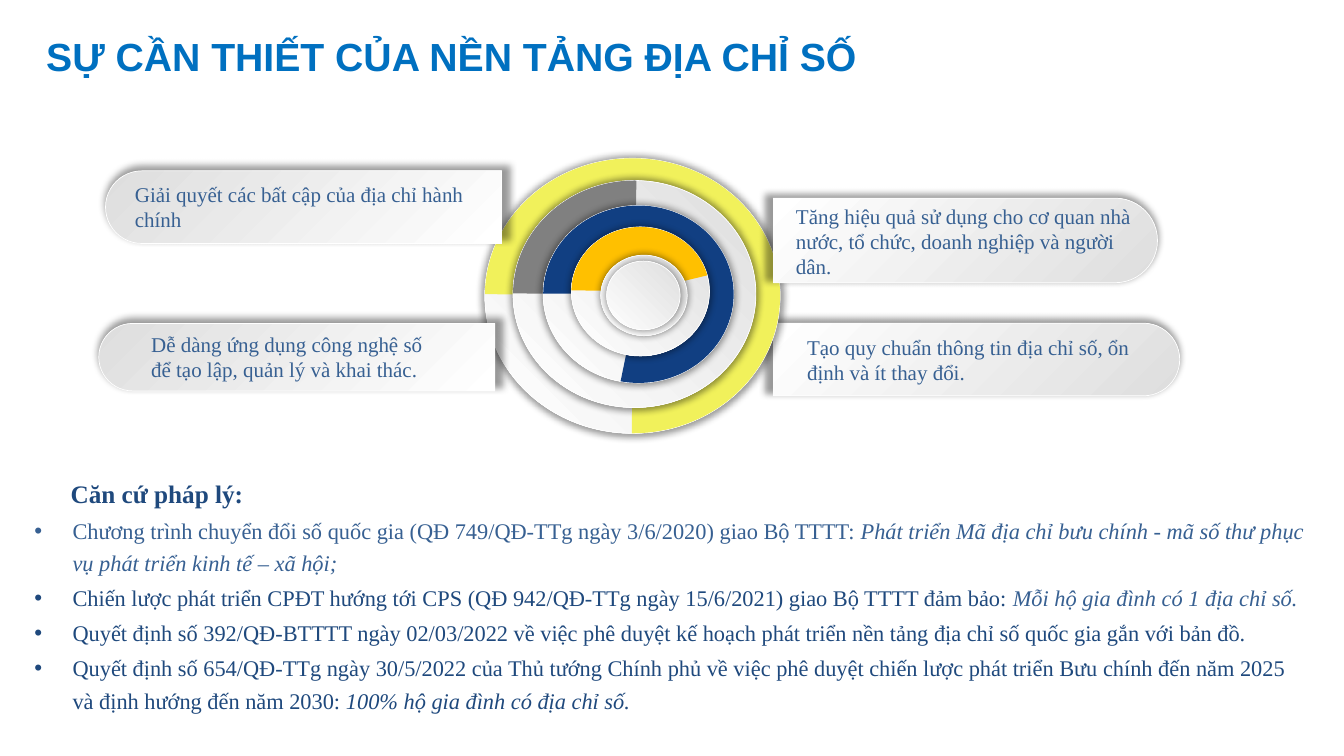
from dataclasses import dataclass

from lxml.etree import SubElement
from pptx import Presentation
from pptx.dml.color import RGBColor
from pptx.enum.shapes import MSO_SHAPE as Preset
from pptx.enum.text import MSO_ANCHOR as Anchor, MSO_AUTO_SIZE as AutoSize, PP_ALIGN as Align
from pptx.oxml.ns import qn
from pptx.util import Cm, Pt

SERIF = "Times New Roman"
STEEL = "376092"
NAVY = "1F497D"


@dataclass(frozen=True)
class Area:
    left: float
    top: float
    width: float
    height: float

    def lengths(self) -> tuple:
        return Cm(self.left), Cm(self.top), Cm(self.width), Cm(self.height)


@dataclass(frozen=True)
class Tab:
    center_x: float
    center_y: float
    thickness: float
    length: float
    rotation: int


@dataclass(frozen=True)
class Ring:
    area: Area
    start: float = 0
    end: float = 0
    color: str = ""


@dataclass(frozen=True)
class Label:
    area: Area
    text: str


@dataclass(frozen=True)
class Piece:
    text: str
    color: str = NAVY
    italic: bool = False


TABS = [
    Tab(24.61, 9.06, 1.83, 10.24, 90),
    Tab(7.65, 5.22, 1.83, 9.98, 270),
    Tab(7.48, 9, 1.7, 9.98, 270),
    Tab(24.33, 6.06, 2.13, 9.68, 90),
]
RINGS = [
    Ring(Area(12.22, 3.99, 7.44, 6.93), 180.65, 90.22, "F1F15B"),
    Ring(Area(12.93, 4.55, 6.12, 5.72), 180.27, 270.98, "808080"),
    Ring(Area(13.69, 5.18, 4.8, 4.47), 180.42, 101.58, "113F82"),
    Ring(Area(14.4, 5.72, 3.48, 3.25), 180.98, 346.45, "FFC000"),
]
HUB = [
    Ring(Area(15.14, 6.43, 2.18, 2.03)),
    Ring(Area(15.29, 6.58, 1.85, 1.73)),
]
LABELS = [
    Label(Area(3.15, 4.45, 9.25, 1.55), "Giải quyết các bất cập của địa chỉ hành chính"),
    Label(Area(19.81, 5, 9.35, 2.18),
          "Tăng hiệu quả sử dụng cho cơ quan nhà nước, tổ chức, doanh nghiệp và người dân."),
    Label(Area(3.56, 8.23, 7.85, 1.55),
          "Dễ dàng ứng dụng công nghệ số để tạo lập, quản lý và khai thác."),
    Label(Area(20.09, 8.31, 9.07, 1.55),
          "Tạo quy chuẩn thông tin địa chỉ số, ổn định và ít thay đổi."),
]
LEGAL_BASES = [
    [
        Piece("Chương trình chuyển đổi số quốc gia (QĐ 749/QĐ-TTg ngày 3/6/2020) giao Bộ TTTT: ", STEEL),
        Piece("Phát triển Mã địa chỉ bưu chính - mã số thư phục vụ phát triển kinh tế – xã hội;",
              STEEL, True),
    ],
    [
        Piece("Chiến lược phát triển CPĐT hướng tới CPS (QĐ 942/QĐ-TTg ngày 15/6/2021) "
              "giao Bộ TTTT đảm bảo: "),
        Piece("Mỗi hộ gia đình có 1 địa chỉ số.", STEEL, True),
    ],
    [
        Piece("Quyết định số 392/QĐ-BTTTT ngày 02/03/2022 về việc phê duyệt kế hoạch "
              "phát triển nền tảng địa chỉ số quốc gia gắn với bản đồ."),
    ],
    [
        Piece("Quyết định số 654/QĐ-TTg ngày 30/5/2022 của Thủ tướng Chính phủ về việc phê duyệt "
              "chiến lược phát triển Bưu chính đến năm 2025 và định hướng đến năm 2030: "),
        Piece("100% hộ gia đình có địa chỉ số.", italic=True),
    ],
]


def rgb(color: str) -> RGBColor:
    return RGBColor.from_string(color)


def style_font(font, name: str, size: float, color: str, bold=False, italic=False) -> None:
    font.name, font.size, font.bold, font.italic = name, Pt(size), bold, italic
    font.color.rgb = rgb(color)


def add_glow(shape) -> None:
    shape.shadow.inherit = False
    effects = shape._element.spPr.find(qn("a:effectLst"))
    shadow = SubElement(effects, qn("a:outerShdw"), blurRad=str(Pt(5)), sx="102000",
                        sy="102000", algn="ctr", rotWithShape="0")
    black = SubElement(shadow, qn("a:srgbClr"), val="000000")
    SubElement(black, qn("a:alpha"), val="40000")


def add_silver(page, preset, area: Area):
    shape = page.shapes.add_shape(preset, *area.lengths())
    shape.fill.gradient()
    shape.fill.gradient_angle = 225
    for stop, color in zip(shape.fill.gradient_stops, ("DEDEDE", "FFFFFF")):
        stop.color.rgb = rgb(color)
    shape.line.color.rgb = rgb("FFFFFF")
    shape.line.width = Pt(0.5)
    add_glow(shape)
    return shape


def add_tab(page, tab: Tab) -> None:
    area = Area(tab.center_x - tab.thickness / 2, tab.center_y - tab.length / 2,
                tab.thickness, tab.length)
    shape = add_silver(page, Preset.ROUND_2_SAME_RECTANGLE, area)
    shape.adjustments[0], shape.adjustments[1] = 0.5, 0
    shape.rotation = tab.rotation


def add_ring(page, ring: Ring) -> None:
    add_silver(page, Preset.OVAL, ring.area)
    if ring.color:
        sector = page.shapes.add_shape(Preset.PIE, *ring.area.lengths())
        sector.adjustments[0], sector.adjustments[1] = ring.start * 0.6, ring.end * 0.6
        sector.fill.solid()
        sector.fill.fore_color.rgb = rgb(ring.color)
        sector.line.fill.background()
        sector.shadow.inherit = False


def add_box(page, area: Area):
    frame = page.shapes.add_textbox(*area.lengths()).text_frame
    frame.word_wrap = True
    frame.auto_size = AutoSize.SHAPE_TO_FIT_TEXT
    return frame


def add_label(page, label: Label) -> None:
    frame = add_box(page, label.area)
    frame.text = label.text
    style_font(frame.paragraphs[0].runs[0].font, SERIF, 15, STEEL)


def set_title(page) -> None:
    title = page.shapes.title
    title.left, title.top, title.width, title.height = Area(0.91, 0.2, 30.48, 2.41).lengths()
    frame = title.text_frame
    frame.text = "SỰ CẦN THIẾT CỦA NỀN TẢNG ĐỊA CHỈ SỐ"
    frame.vertical_anchor = Anchor.MIDDLE
    frame.auto_size = AutoSize.NONE
    frame.paragraphs[0].alignment = Align.LEFT
    style_font(frame.paragraphs[0].runs[0].font, "Arial", 28, "0070C0", bold=True)


def add_legal_bases(page) -> None:
    frame = add_box(page, Area(0.69, 11.81, 32.49, 6.22))
    frame.margin_left = frame.margin_right = Cm(0.18)
    frame.margin_top = frame.margin_bottom = Cm(0.1)
    heading = frame.paragraphs[0]
    heading.text = "Căn cứ pháp lý:"
    heading.line_spacing = 1.2
    heading._p.get_or_add_pPr().set("marL", str(Cm(0.91)))
    style_font(heading.runs[0].font, SERIF, 18, NAVY, bold=True)
    for pieces in LEGAL_BASES:
        para = frame.add_paragraph()
        para.line_spacing = 1.2
        para.space_before = Pt(2)
        properties = para._p.get_or_add_pPr()
        properties.set("marL", str(Cm(0.96)))
        properties.set("indent", str(-Cm(0.96)))
        SubElement(properties, qn("a:buFont"), typeface="Arial")
        SubElement(properties, qn("a:buChar"), char="•")
        for piece in pieces:
            span = para.add_run()
            span.text = piece.text
            style_font(span.font, SERIF, 16, piece.color, italic=piece.italic)


def main() -> None:
    deck = Presentation()
    deck.slide_width, deck.slide_height = Cm(33.87), Cm(19.05)
    page = deck.slides.add_slide(deck.slide_layouts[5])
    set_title(page)
    for tab, ring in zip(TABS, RINGS):
        add_tab(page, tab)
        add_ring(page, ring)
    for ring in HUB:
        add_ring(page, ring)
    for label in LABELS:
        add_label(page, label)
    add_legal_bases(page)
    deck.save("out.pptx")


if __name__ == "__main__":
    main()
